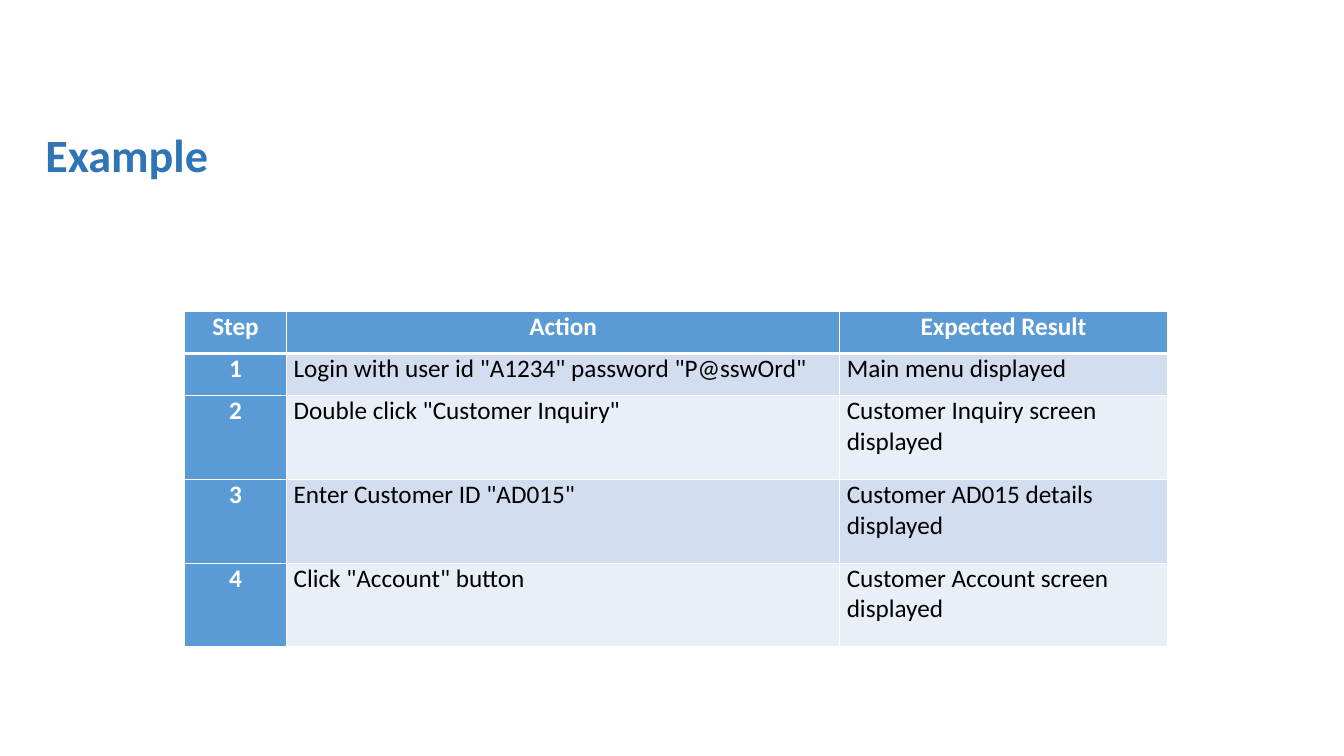
from dataclasses import dataclass

from lxml import etree
from pptx import Presentation
from pptx import util as u
from pptx.dml.color import RGBColor
from pptx.enum import text
from pptx.oxml import ns

TITLE_BLUE = RGBColor(0x2E, 0x75, 0xB6)
HEADER_BLUE = RGBColor(0x5B, 0x9B, 0xD5)
BAND_DARK = RGBColor(0xD2, 0xDE, 0xEF)
BAND_LIGHT = RGBColor(0xEA, 0xEF, 0xF7)
WHITE = RGBColor(0xFF, 0xFF, 0xFF)
BLACK = RGBColor(0, 0, 0)
FONT = "Calibri"


@dataclass
class TestStep:
    step: str
    action: str
    result: str
    height: float  # cm


HEADER = TestStep("Step", "Action", "Expected Result", 1.06)
STEPS = [
    TestStep("1", 'Login with user id "A1234" password "P@sswOrd"', "Main menu displayed", 1.06),
    TestStep("2", 'Double click "Customer Inquiry"', "Customer Inquiry screen displayed", 2.11),
    TestStep("3", 'Enter Customer ID "AD015"', "Customer AD015 details displayed", 2.11),
    TestStep("4", 'Click "Account" button', "Customer Account screen displayed", 2.11),
]
COLUMN_WIDTHS = (2.57, 13.94, 8.26)


def add_border(cell, side: str, width: float) -> None:
    tc_pr = cell._tc.get_or_add_tcPr()
    ln = etree.SubElement(tc_pr, ns.qn(f"a:ln{side}"), w=str(u.Pt(width)))
    fill = etree.SubElement(ln, ns.qn("a:solidFill"))
    etree.SubElement(fill, ns.qn("a:srgbClr"), val=str(WHITE))


def fill_cell(cell, words: str, row: int, col: int) -> None:
    heading = row == 0 or col == 0
    cell.margin_left = cell.margin_right = u.Cm(0.18)
    cell.margin_top = cell.margin_bottom = 0

    # Borders, with a heavier rule under the header row
    for side in "LRTB":
        under_header = (row, side) in ((0, "B"), (1, "T"))
        add_border(cell, side, 3 if under_header else 1)
    cell.fill.solid()
    band = BAND_DARK if row % 2 else BAND_LIGHT
    cell.fill.fore_color.rgb = HEADER_BLUE if heading else band

    p = cell.text_frame.paragraphs[0]
    p.text = words
    p.alignment = text.PP_ALIGN.CENTER if heading else text.PP_ALIGN.LEFT
    p.font.name, p.font.size, p.font.bold = FONT, u.Pt(18), heading
    p.font.color.rgb = WHITE if heading else BLACK


def add_title(s, words: str) -> None:
    sp = s.shapes.title
    sp.left, sp.top, sp.width, sp.height = u.Cm(0.89), u.Cm(2.72), u.Cm(32.2), u.Cm(2.51)
    tf = sp.text_frame
    tf.vertical_anchor = text.MSO_ANCHOR.MIDDLE
    p = tf.paragraphs[0]
    p.text = words
    p.alignment = text.PP_ALIGN.LEFT
    p.line_spacing = 0.9
    p.font.name, p.font.size, p.font.bold = FONT, u.Pt(33), True
    p.font.color.rgb = TITLE_BLUE


def add_steps_table(s, rows: list[TestStep]) -> None:
    frame = s.shapes.add_table(
        len(rows), len(COLUMN_WIDTHS), u.Cm(4.65), u.Cm(7.85),
        u.Cm(sum(COLUMN_WIDTHS)), u.Cm(sum(r.height for r in rows)))
    table = frame.table
    table.first_col = True
    for column, width in zip(table.columns, COLUMN_WIDTHS):
        column.width = u.Cm(width)
    for i, step in enumerate(rows):
        table.rows[i].height = u.Cm(step.height)
        for j, words in enumerate((step.step, step.action, step.result)):
            fill_cell(table.cell(i, j), words, i, j)


def main() -> None:
    prs = Presentation()
    prs.slide_width, prs.slide_height = u.Cm(33.87), u.Cm(19.05)
    s = prs.slides.add_slide(prs.slide_layouts[5])
    add_title(s, "Example")
    add_steps_table(s, [HEADER, *STEPS])
    prs.save("out.pptx")


if __name__ == "__main__":
    main()
